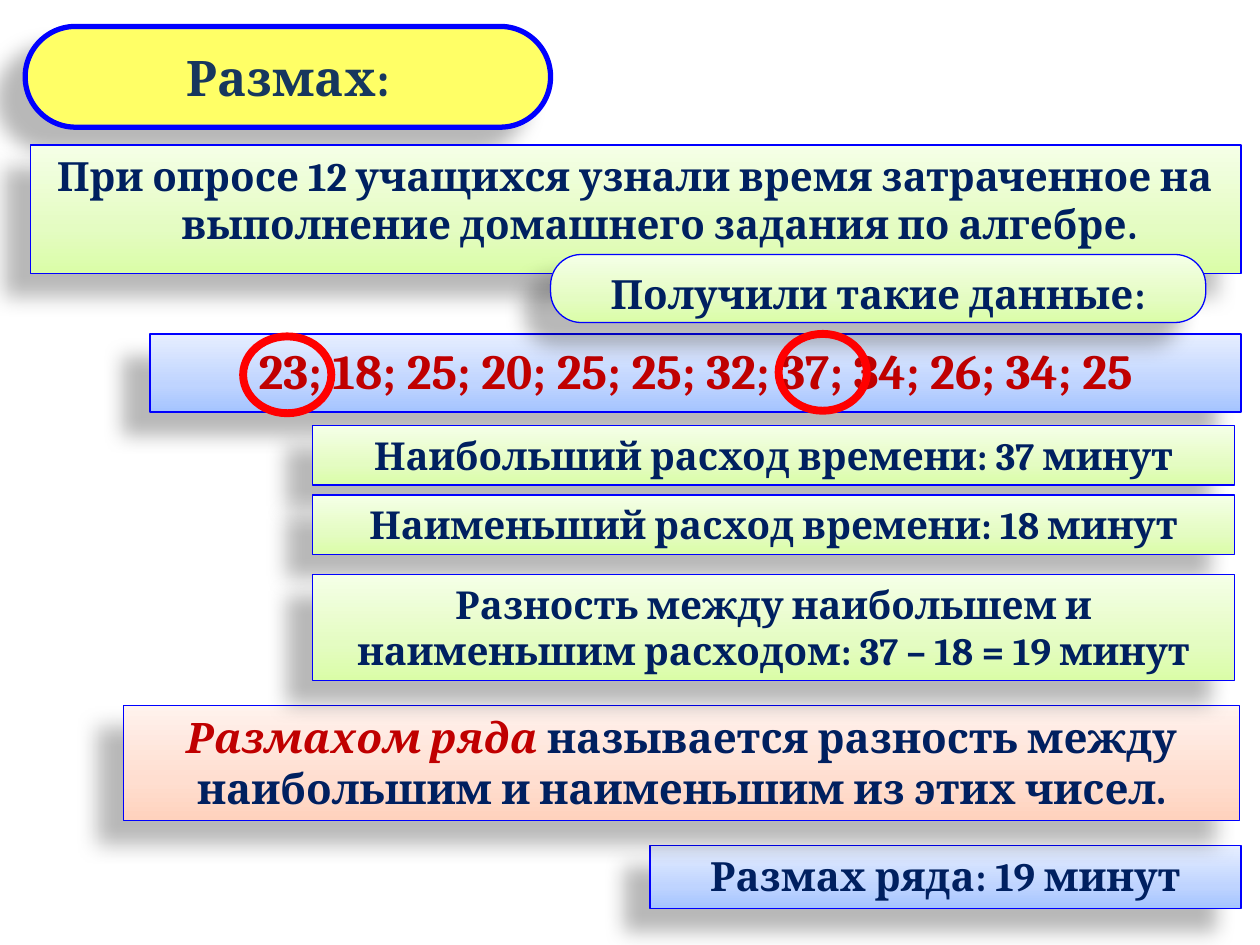
import pptx
import pptx.util
import pptx.dml.color
import pptx.enum.shapes
import pptx.enum.text
import pptx.oxml
import pptx.oxml.ns
import lxml.etree

Inches = pptx.util.Inches
Pt = pptx.util.Pt
SHAPES = pptx.enum.shapes.MSO_SHAPE
ANCHOR = pptx.enum.text.MSO_ANCHOR

FONT = "Cambria"
NAVY, CRIMSON, BLUE, RED = "002060", "C00000", "0000FF", "FF0000"
# Gradients run from the bottom edge to the top edge
GREEN_FADE = ("DAFDA7", "E4FCC2", "F5FFE7")
BLUE_FADE = ("A4C4FF", "BFD4FF", "E6EEFF")
PEACH_FADE = ("FFD2BD", "FFDED0", "FFF2ED")
NAMESPACE = pptx.oxml.ns.nsdecls("a")


def color(value):
    return pptx.dml.color.RGBColor.from_string(value)


def set_gradient(shape, colors):
    shape.fill.gradient()
    shape.fill.gradient_angle = 90
    stops = shape._element.spPr.find(".//" + pptx.oxml.ns.qn("a:gsLst"))
    for stop in list(stops):
        stops.remove(stop)
    for position, value in zip((0, 35, 100), colors):
        stops.append(pptx.oxml.parse_xml(
            f'<a:gs {NAMESPACE} pos="{position * 1000}"><a:srgbClr val="{value}"/></a:gs>'))


def set_shadow(shape):
    shape.shadow.inherit = False
    effects = shape._element.spPr.find(pptx.oxml.ns.qn("a:effectLst"))
    effects.append(pptx.oxml.parse_xml(
        f'<a:outerShdw {NAMESPACE} blurRad="{Pt(11.8)}" dist="{Pt(19.7)}" '
        f'dir="{141 * 60000}" algn="ctr" rotWithShape="0">'
        '<a:srgbClr val="000000"><a:alpha val="28000"/></a:srgbClr></a:outerShdw>'))


def write(shape, text, size=23, fill=NAVY, lead="", hanging=False, anchor=ANCHOR.TOP):
    """Write bold centred text, with an optional italic red lead-in."""
    frame = shape.text_frame
    frame.word_wrap = True
    frame.vertical_anchor = anchor
    para = frame.paragraphs[0]
    para.alignment = pptx.enum.text.PP_ALIGN.CENTER
    if hanging:
        properties = para._p.get_or_add_pPr()
        properties.set("marL", str(Inches(0.38)))
        properties.set("indent", str(-Inches(0.38)))
    for words, shade, italic in ((lead, CRIMSON, True), (text, fill, False)):
        if words:
            span = para.add_run()
            span.text = words
            span.font.name = FONT
            span.font.size = Pt(size)
            span.font.bold = True
            span.font.italic = italic
            span.font.color.rgb = color(shade)


def add_panel(page, box, text, fade=None, solid=None, line_width=0.75,
              rounding=None, **text_format):
    kind = SHAPES.RECTANGLE if rounding is None else SHAPES.ROUNDED_RECTANGLE
    panel = page.shapes.add_shape(kind, *map(Inches, box))
    if rounding is not None:
        panel.adjustments[0] = rounding
    if fade:
        set_gradient(panel, fade)
    else:
        panel.fill.solid()
        panel.fill.fore_color.rgb = color(solid)
    panel.line.color.rgb = color(BLUE)
    panel.line.width = Pt(line_width)
    set_shadow(panel)
    write(panel, text, **text_format)


def add_ring(page, box):
    ring = page.shapes.add_shape(SHAPES.OVAL, *map(Inches, box))
    ring.shadow.inherit = False
    ring.fill.background()
    ring.line.color.rgb = color(RED)
    ring.line.width = Pt(4.5)


def add_task(page):
    add_panel(page, (0.2, 0.21, 4.17, 0.8), "Размах:", solid="FFFF66", line_width=3,
              rounding=0.5, size=28, fill="17375E", anchor=ANCHOR.MIDDLE)
    add_panel(page, (0.24, 1.15, 9.61, 1.02),
              "При опросе 12 учащихся узнали время затраченное на "
              "выполнение домашнего задания по алгебре.",
              fade=GREEN_FADE, hanging=True)
    add_panel(page, (1.19, 2.65, 8.66, 0.62),
              "23; 18; 25; 20; 25; 25; 32; 37; 34; 26; 34; 25",
              fade=BLUE_FADE, size=28, fill=CRIMSON, hanging=True)
    add_panel(page, (4.37, 2.02, 5.2, 0.54), "Получили такие данные:",
              fade=GREEN_FADE, rounding=0.45, hanging=True)


def add_definition(page):
    add_panel(page, (0.98, 5.6, 8.86, 0.91),
              "называется разность между наибольшим и наименьшим из этих чисел.",
              fade=PEACH_FADE, size=24, lead="Размахом ряда ")


def add_steps(page, left, width):
    steps = (
        (3.38, 0.47, "Наибольший расход времени: 37 минут"),
        (3.93, 0.47, "Наименьший расход времени: 18 минут"),
        (4.56, 0.84, "Разность между наибольшем и наименьшим расходом: 37 – 18 = 19 минут"),
    )
    for top, height, text in steps:
        add_panel(page, (left, top, width, height), text, fade=GREEN_FADE, size=22)


def main():
    deck = pptx.Presentation()
    deck.slide_width, deck.slide_height = Inches(10), Inches(7.5)
    page = deck.slides.add_slide(deck.slide_layouts[6])

    # Answer lies behind everything else
    add_panel(page, (6.18 - 1.02, 6.71, 4.69, 0.5), "Размах ряда: 19 минут", fade=BLUE_FADE)
    add_task(page)
    add_definition(page)
    add_steps(page, 2.48, 7.32)

    # Rings over the data row
    for left, top in ((6.18, 2.65), (1.93, 2.67)):
        add_ring(page, (left, top, 0.7, 0.61))

    deck.save("out.pptx")


if __name__ == "__main__":
    main()
